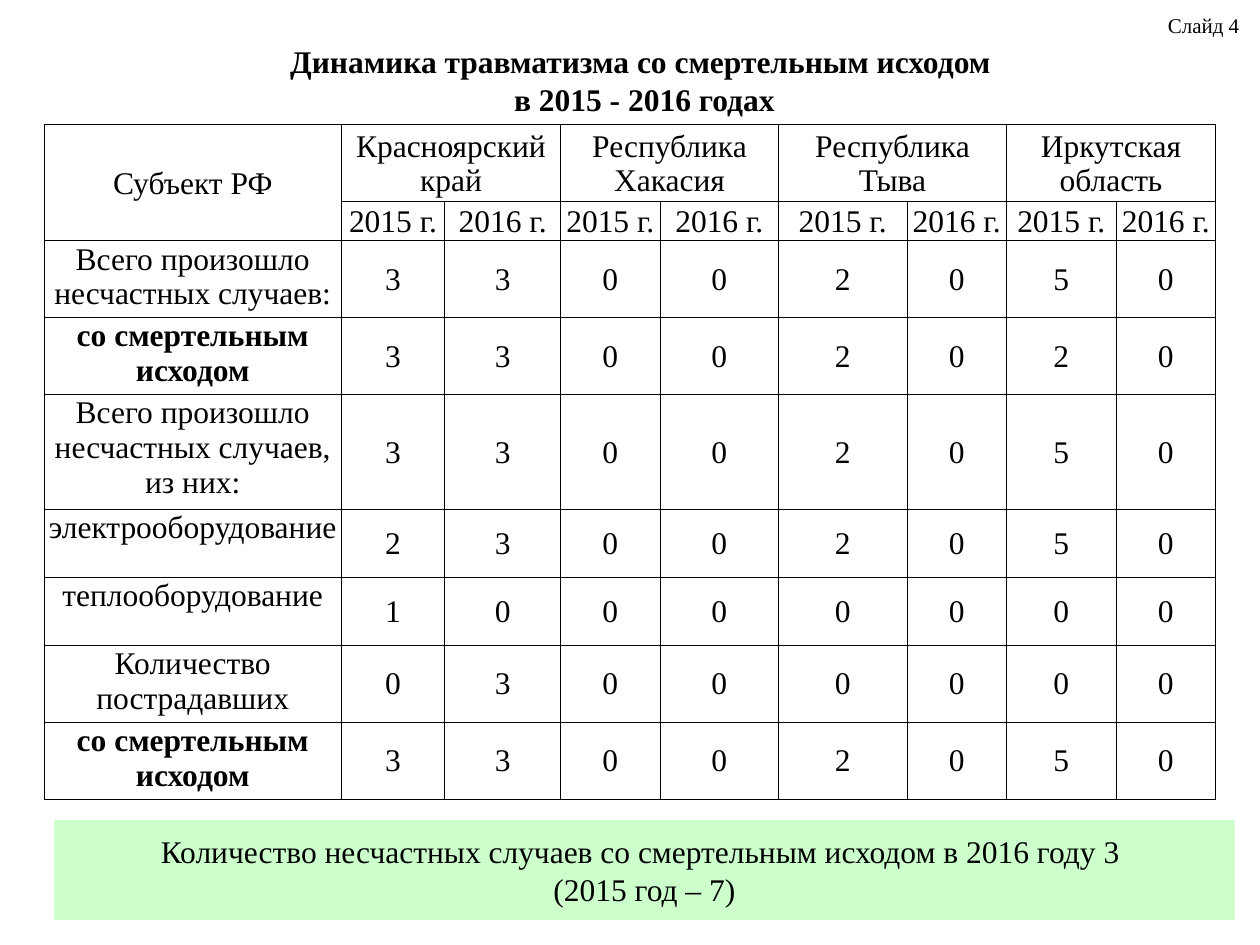
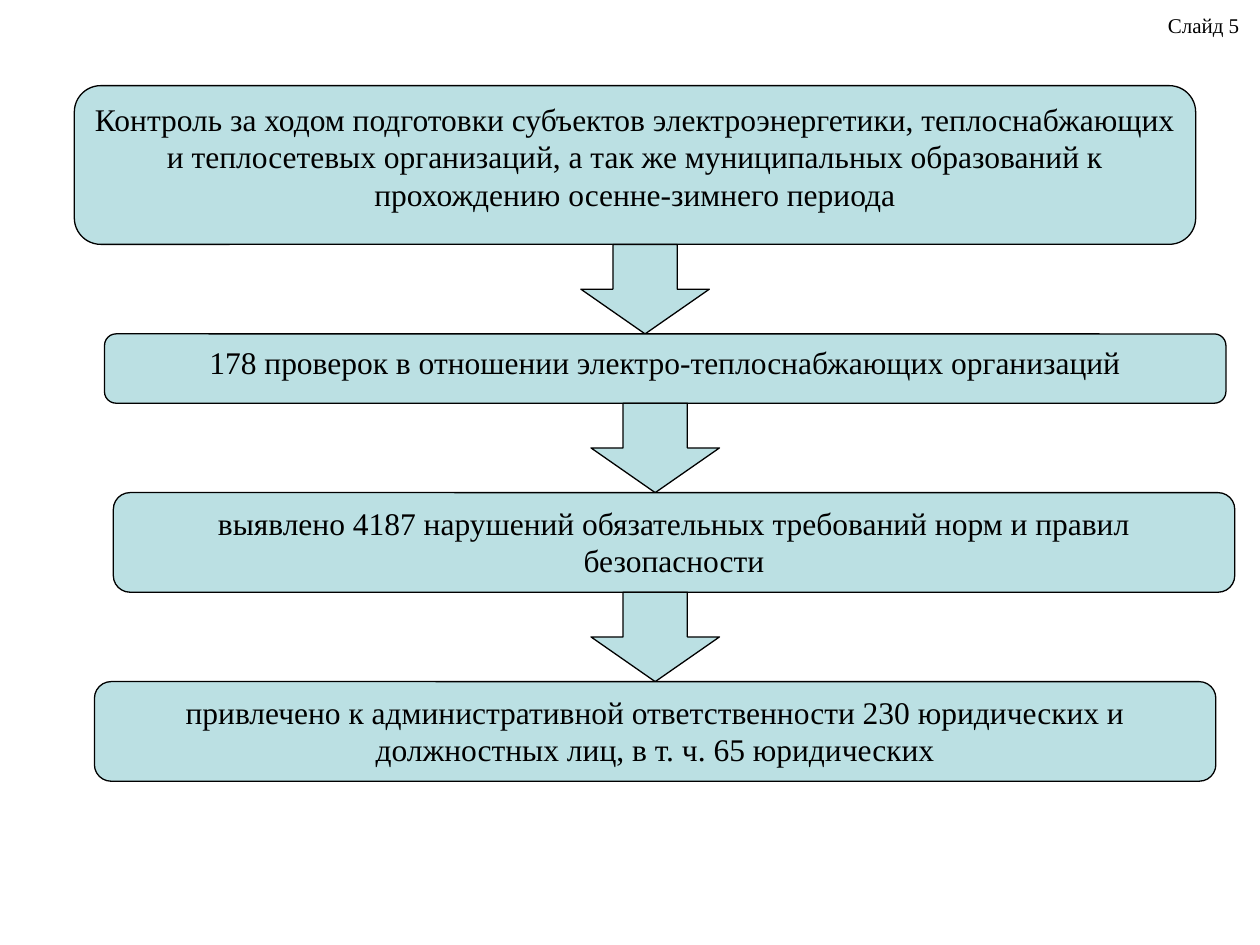
from lxml import etree
from pptx import Presentation
from pptx import util as u
from pptx.dml.color import RGBColor
from pptx.enum import shapes, text
from pptx.oxml.ns import qn

FONT = "Times New Roman"
BLACK, GREEN, TEAL = "000000", "CCFFCC", "BBE0E3"

# Content: injury table
TITLE = "Динамика травматизма со смертельным исходом \vв 2015 - 2016 годах"
CORNER = "Субъект РФ"
REGIONS = ["Красноярский край", "Республика Хакасия", "Республика Тыва", "Иркутская область"]
YEARS = ["2015 г.", "2016 г."]
FATAL = "со смертельным исходом"
ROWS = [
    ("Всего произошло несчастных случаев:", "33002050"),
    (FATAL, "33002020"),
    ("Всего произошло несчастных случаев, из них:", "33002050"),
    ("электрооборудование", "23002050"),
    ("теплооборудование", "10000000"),
    ("Количество пострадавших", "03000000"),
    (FATAL, "33002050"),
]
COLUMN_WIDTHS = [2.36, 0.82, 0.92, 0.79, 0.94, 1.02, 0.79, 0.87, 0.79]
ROW_HEIGHTS = [0.61, 0.31, 0.61, 0.61, 0.91, 0.54, 0.54, 0.61, 0.61]
SUMMARY = ["Количество несчастных случаев со смертельным исходом в 2016 году 3 ",
           "(2015 год – 7)"]

# Content: inspection steps as (left, height, text), and the arrows' lefts
STEPS = [
    (0.59, 1.26, "Контроль за ходом подготовки субъектов электроэнергетики, теплоснабжающих "
                 "и теплосетевых организаций, а так же муниципальных образований к "
                 "прохождению осенне-зимнего периода"),
    (0.83, 0.55, "178 проверок в отношении электро-теплоснабжающих организаций"),
    (0.90, 0.79, "выявлено 4187 нарушений обязательных требований норм и правил безопасности"),
    (0.75, 0.79, "привлечено к административной ответственности 230 юридических и "
                 "должностных лиц, в т. ч. 65 юридических"),
]
ARROW_LEFTS = [4.61, 4.69, 4.69]
STEP_TOP, STEP_WIDTH, STEP_GAP, ARROW_WIDTH = 0.68, 8.9, 0.71, 1.02


def color(value):
    return RGBColor.from_string(value)


def inches(*lengths):
    return [u.Inches(length) for length in lengths]


def write(frame, lines, size=18, bold=False, align=text.PP_ALIGN.CENTER,
          anchor=text.MSO_ANCHOR.TOP):
    frame.word_wrap = True
    frame.vertical_anchor = anchor
    for index, line in enumerate(lines):
        para = frame.add_paragraph() if index else frame.paragraphs[0]
        para.text = line
        para.alignment = align
        para.font.name, para.font.size, para.font.bold = FONT, u.Pt(size), bold
        para.font.color.rgb = color(BLACK)


def add_box(page, kind, area, fill, outlined=True):
    box = page.shapes.add_shape(kind, *inches(*area))
    box.shadow.inherit = False
    box.fill.solid()
    box.fill.fore_color.rgb = color(fill)
    if outlined:
        box.line.color.rgb = color(BLACK)
        box.line.width = u.Pt(0.75)
    else:
        box.line.fill.background()
    return box


def add_page(deck, layout, number):
    page = deck.slides.add_slide(deck.slide_layouts[layout])
    label = page.shapes.add_textbox(*inches(9.17, 0.05, 0.79, 0.36))
    write(label.text_frame, [f"Слайд {number}"], size=12, align=text.PP_ALIGN.LEFT)
    label.text_frame.word_wrap = False
    return page


def fill_cell(cell, content, bold=False, anchor=text.MSO_ANCHOR.MIDDLE):
    write(cell.text_frame, [content], bold=bold)
    cell.vertical_anchor = anchor
    cell.margin_left, cell.margin_top, cell.margin_right, cell.margin_bottom = inches(
        0.01, 0.01, 0.01, 0)


def style_cell(cell):
    properties = cell._tc.get_or_add_tcPr()
    for side in ("a:lnL", "a:lnR", "a:lnT", "a:lnB"):
        line = etree.SubElement(properties, qn(side), w=str(u.Pt(0.5)))
        solid = etree.SubElement(line, qn("a:solidFill"))
        etree.SubElement(solid, qn("a:srgbClr"), val=BLACK)
    cell.fill.background()


def add_injury_table(page):
    frame = page.shapes.add_table(
        len(ROW_HEIGHTS), len(COLUMN_WIDTHS),
        *inches(0.35, 0.99, sum(COLUMN_WIDTHS), sum(ROW_HEIGHTS)))
    table = frame.table
    table.first_row = table.horz_banding = False
    for column, width in zip(table.columns, COLUMN_WIDTHS):
        column.width = u.Inches(width)
    for row, height in zip(table.rows, ROW_HEIGHTS):
        row.height = u.Inches(height)
    for cell in table.iter_cells():
        style_cell(cell)

    # Two header rows: regions above pairs of years
    table.cell(0, 0).merge(table.cell(1, 0))
    fill_cell(table.cell(0, 0), CORNER)
    for index, region in enumerate(REGIONS):
        first = 1 + index * len(YEARS)
        table.cell(0, first).merge(table.cell(0, first + len(YEARS) - 1))
        fill_cell(table.cell(0, first), region)
        for offset, year in enumerate(YEARS):
            fill_cell(table.cell(1, first + offset), year)

    # Data rows, one digit per column
    for row, (label, values) in enumerate(ROWS, start=2):
        fill_cell(table.cell(row, 0), label, label == FATAL, text.MSO_ANCHOR.TOP)
        for column, value in enumerate(values, start=1):
            fill_cell(table.cell(row, column), value)


def build_injuries(deck):
    page = add_page(deck, 5, 4)
    title = page.shapes.title
    title.left, title.top, title.width, title.height = inches(0.43, 0.36, 9.37, 0.55)
    write(title.text_frame, [TITLE], bold=True, anchor=text.MSO_ANCHOR.MIDDLE)
    add_injury_table(page)
    summary = add_box(page, shapes.MSO_SHAPE.RECTANGLE, (0.43, 6.51, 9.37, 0.79), GREEN, False)
    write(summary.text_frame, SUMMARY, anchor=text.MSO_ANCHOR.MIDDLE)


def build_inspections(deck):
    page = add_page(deck, 6, 5)
    top = STEP_TOP
    for index, (left, height, content) in enumerate(STEPS):
        step = add_box(page, shapes.MSO_SHAPE.ROUNDED_RECTANGLE,
                       (left, top, STEP_WIDTH, height), TEAL)
        write(step.text_frame, [content])
        top += height
        if index < len(ARROW_LEFTS):
            add_box(page, shapes.MSO_SHAPE.DOWN_ARROW,
                    (ARROW_LEFTS[index], top, ARROW_WIDTH, STEP_GAP), TEAL)
        top += STEP_GAP


def main():
    deck = Presentation()
    deck.slide_width, deck.slide_height = inches(10, 7.5)
    build_injuries(deck)
    build_inspections(deck)
    deck.save("out.pptx")


if __name__ == "__main__":
    main()
